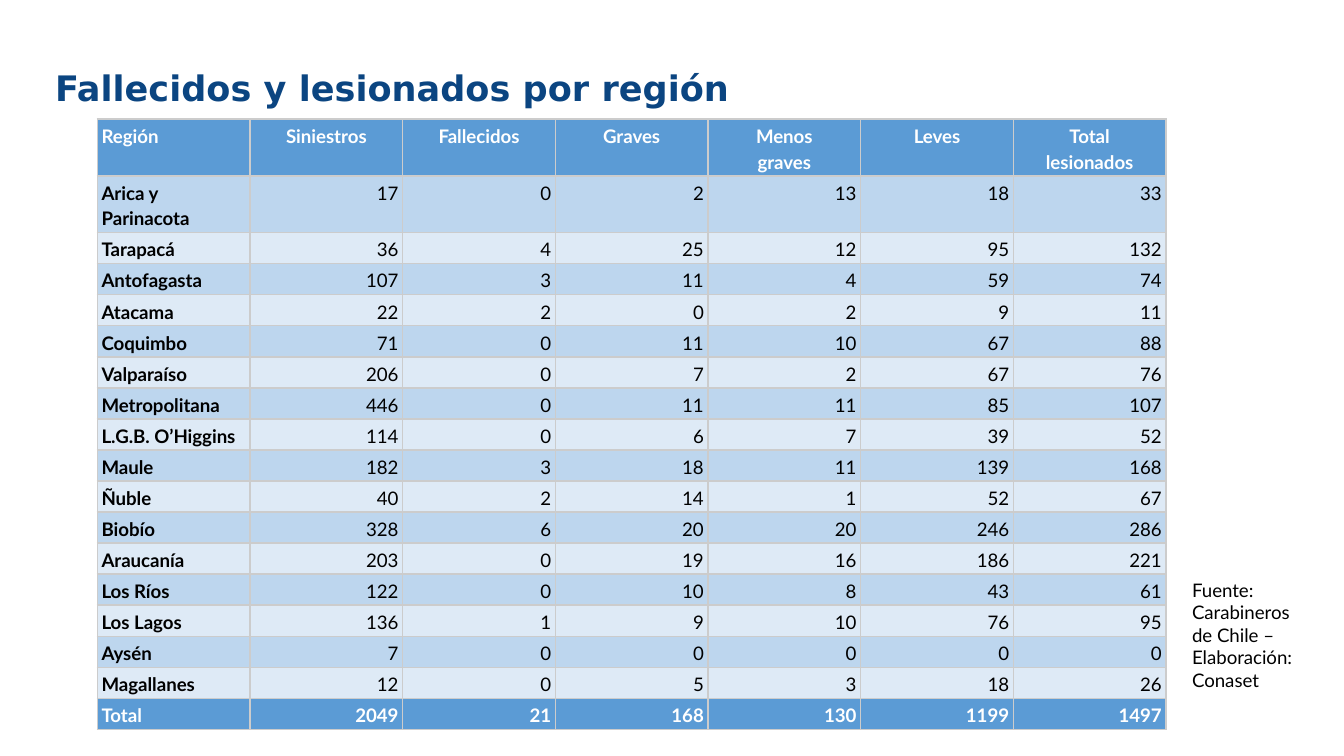
from lxml.etree import SubElement
from pptx import Presentation
from pptx.dml.color import RGBColor
from pptx.enum.text import MSO_ANCHOR, MSO_AUTO_SIZE, PP_ALIGN
from pptx.oxml.ns import qn
from pptx.util import Cm, Pt

COLORS = {
    "title": "0B4581",
    "header": "5B9BD5",
    "odd": "BDD6EE",
    "even": "DEEAF6",
    "border": "CCCCCC",
    "text": "000000",
    "light": "FFFFFF",
}

HEADINGS = ["Región", "Siniestros", "Fallecidos", "Graves",
            "Menos\ngraves", "Leves", "Total\nlesionados"]

REGIONS = [
    ("Arica y Parinacota", 17, 0, 2, 13, 18, 33),
    ("Tarapacá", 36, 4, 25, 12, 95, 132),
    ("Antofagasta", 107, 3, 11, 4, 59, 74),
    ("Atacama", 22, 2, 0, 2, 9, 11),
    ("Coquimbo", 71, 0, 11, 10, 67, 88),
    ("Valparaíso", 206, 0, 7, 2, 67, 76),
    ("Metropolitana", 446, 0, 11, 11, 85, 107),
    ("L.G.B. O’Higgins", 114, 0, 6, 7, 39, 52),
    ("Maule", 182, 3, 18, 11, 139, 168),
    ("Ñuble", 40, 2, 14, 1, 52, 67),
    ("Biobío", 328, 6, 20, 20, 246, 286),
    ("Araucanía", 203, 0, 19, 16, 186, 221),
    ("Los Ríos", 122, 0, 10, 8, 43, 61),
    ("Los Lagos", 136, 1, 9, 10, 76, 95),
    ("Aysén", 7, 0, 0, 0, 0, 0),
    ("Magallanes", 12, 0, 5, 3, 18, 26),
]

# The totals are those published, which need not equal the column sums.
TOTALS = ("Total", 2049, 21, 168, 130, 1199, 1497)


class SlideBuilder:
    title_font = "DejaVu Sans"
    body_font = "Lato"
    body_size = 10
    border_width = Pt(0.94)

    def __init__(self, slide):
        self.slide = slide

    def format_text(self, text_frame, font, size, color, bold=False,
                    align=PP_ALIGN.LEFT, spacing=1.0):
        for paragraph in text_frame.paragraphs:
            paragraph.alignment = align
            paragraph.line_spacing = spacing
            for run in paragraph.runs:
                run.font.name = font
                run.font.size = Pt(size)
                run.font.bold = bold
                run.font.color.rgb = RGBColor.from_string(COLORS[color])

    def set_insets(self, target, horizontal, vertical):
        target.margin_left = target.margin_right = Cm(horizontal)
        target.margin_top = target.margin_bottom = Cm(vertical)

    def add_title(self, text, left, top, width, height):
        title = self.slide.shapes.title
        title.left, title.top = Cm(left), Cm(top)
        title.width, title.height = Cm(width), Cm(height)
        text_frame = title.text_frame
        text_frame.text = text
        text_frame.auto_size = MSO_AUTO_SIZE.NONE
        text_frame.vertical_anchor = MSO_ANCHOR.TOP
        self.set_insets(text_frame, 0.18, 0.1)
        self.format_text(text_frame, self.title_font, 18.8, "title",
                         bold=True, spacing=0.9)

    def add_note(self, text, left, top, width, height):
        box = self.slide.shapes.add_textbox(Cm(left), Cm(top), Cm(width), Cm(height))
        text_frame = box.text_frame
        text_frame.text = text
        text_frame.word_wrap = True
        text_frame.auto_size = MSO_AUTO_SIZE.SHAPE_TO_FIT_TEXT
        self.set_insets(text_frame, 0.25, 0.25)
        self.format_text(text_frame, self.body_font, self.body_size, "text")

    def set_borders(self, cell):
        properties = cell._tc.get_or_add_tcPr()
        for position, side in enumerate(("a:lnL", "a:lnR", "a:lnT", "a:lnB")):
            line = SubElement(properties, qn(side), w=str(self.border_width))
            fill = SubElement(line, qn("a:solidFill"))
            SubElement(fill, qn("a:srgbClr"), val=COLORS["border"])
            properties.remove(line)
            properties.insert(position, line)

    def fill_cell(self, cell, text, fill, color, bold, align):
        cell.text = text
        cell.fill.solid()
        cell.fill.fore_color.rgb = RGBColor.from_string(COLORS[fill])
        self.set_insets(cell, 0.08, 0.05)
        self.format_text(cell.text_frame, self.body_font, self.body_size, color,
                         bold, align, spacing=1.15)
        self.set_borders(cell)

    def add_data_table(self, rows, row_heights, left, top, width, height):
        """Add a table whose first row holds headings and whose last holds totals."""
        column_count = len(rows[0])
        frame = self.slide.shapes.add_table(
            len(rows), column_count, Cm(left), Cm(top), Cm(width), Cm(height))
        table = frame.table
        for column in table.columns:
            column.width = Cm(width / column_count)
        last = len(rows) - 1
        for row_index, values in enumerate(rows):
            table.rows[row_index].height = Cm(row_heights[row_index])
            accented = row_index in (0, last)
            fill = "header" if accented else "odd" if row_index % 2 else "even"
            color = "light" if accented else "text"
            value_align = PP_ALIGN.RIGHT if row_index else PP_ALIGN.CENTER
            for column_index, value in enumerate(values):
                is_label = column_index == 0
                self.fill_cell(table.cell(row_index, column_index), str(value),
                               fill, color, bold=accented or is_label,
                               align=PP_ALIGN.LEFT if is_label else value_align)
        frame.height = Cm(height)


def main():
    presentation = Presentation()
    presentation.slide_width = Cm(25.4)
    presentation.slide_height = Cm(14.29)
    title_only = presentation.slide_layouts[5]
    builder = SlideBuilder(presentation.slides.add_slide(title_only))

    builder.add_title("Fallecidos y lesionados por región", 0.86, 1.24, 23.67, 1.6)
    rows = [HEADINGS, *REGIONS, TOTALS]
    row_heights = [1.02, 0.33] + [0.56] * (len(rows) - 2)
    builder.add_data_table(rows, row_heights, 1.84, 2.25, 20.2, 11.1)
    builder.add_note("Fuente: Carabineros de Chile – Elaboración: Conaset",
                     22.28, 10.69, 2.59, 2.64)

    presentation.save("out.pptx")


if __name__ == "__main__":
    main()
